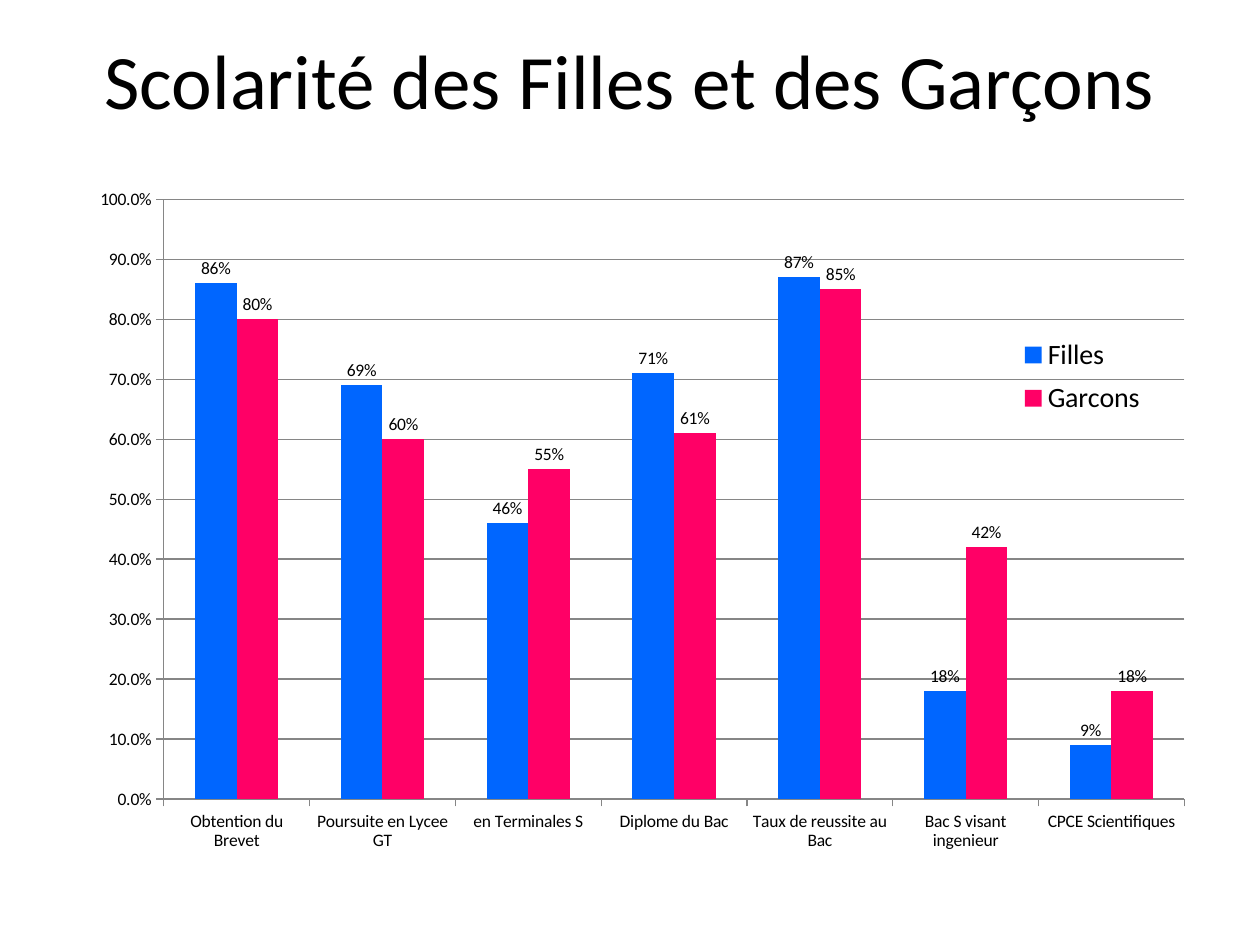
import pptx
import pptx.chart.data
import pptx.dml.color
import pptx.enum.chart
import pptx.enum.text
import pptx.oxml
import pptx.oxml.ns
import pptx.util
from pptx.util import Inches, Pt

RGBColor = pptx.dml.color.RGBColor
BLACK = RGBColor(0x00, 0x00, 0x00)
GRAY = RGBColor(0x86, 0x86, 0x86)
BLUE = RGBColor(0x00, 0x66, 0xFF)
PINK = RGBColor(0xFF, 0x00, 0x66)
FONT = "Calibri"

TITLE = "Scolarité des Filles et des Garçons"
STAGES = [
    "Obtention du Brevet",
    "Poursuite en Lycee GT",
    "en Terminales S",
    "Diplome du Bac",
    "Taux de reussite au Bac",
    "Bac S visant ingenieur",
    "CPCE Scientifiques",
]
SERIES = [
    ("Filles", BLUE, [0.86, 0.69, 0.46, 0.71, 0.87, 0.18, 0.09]),
    ("Garcons", PINK, [0.80, 0.60, 0.55, 0.61, 0.85, 0.42, 0.18]),
]


def style_font(font, size):
    font.name = FONT
    font.size = Pt(size)
    font.bold = False
    font.color.rgb = BLACK


def write_text(shape, text, size, align, anchor):
    frame = shape.text_frame
    frame.word_wrap = True
    frame.vertical_anchor = anchor
    para = frame.paragraphs[0]
    para.alignment = align
    span = para.add_run()
    span.text = text
    style_font(span.font, size)


def manual_layout(x, y, w, h, inner=False):
    """Return a c:layout element; lengths are fractions of the chart."""
    target = '<c:layoutTarget val="inner"/>' if inner else ""
    return pptx.oxml.parse_xml(
        f'<c:layout {pptx.oxml.ns.nsdecls("c")}><c:manualLayout>{target}'
        '<c:xMode val="edge"/><c:yMode val="edge"/>'
        f'<c:x val="{x}"/><c:y val="{y}"/><c:w val="{w}"/><c:h val="{h}"/>'
        "</c:manualLayout></c:layout>"
    )


def drop_layout(parent):
    for layout in parent.findall(pptx.oxml.ns.qn("c:layout")):
        parent.remove(layout)


def add_schooling_chart(page):
    data = pptx.chart.data.CategoryChartData(number_format="0%")
    data.categories = STAGES
    for name, _, values in SERIES:
        data.add_series(name, values)
    chart = page.shapes.add_chart(
        pptx.enum.chart.XL_CHART_TYPE.COLUMN_CLUSTERED,
        Inches(0.67), Inches(1.42), Inches(9), Inches(5.41), data,
    ).chart
    chart.has_title = False
    style_font(chart.font, 10)

    plot = chart.plots[0]
    plot.gap_width = 150
    plot.overlap = 0
    plot.vary_by_categories = False
    for series, (_, color, _) in zip(plot.series, SERIES):
        series.format.fill.solid()
        series.format.fill.fore_color.rgb = color
        series.invert_if_negative = False
        labels = series.data_labels
        labels.show_value = True
        labels.number_format = "0%"
        labels.number_format_is_linked = False
        labels.position = pptx.enum.chart.XL_LABEL_POSITION.OUTSIDE_END
        style_font(labels.font, 10)

    values = chart.value_axis
    values.minimum_scale, values.maximum_scale, values.major_unit = 0, 1, 0.1
    values.has_major_gridlines = True
    values.tick_labels.number_format = "0.0%"
    values.tick_labels.number_format_is_linked = False
    for axis in (chart.category_axis, values):
        axis.major_tick_mark = pptx.enum.chart.XL_TICK_MARK.OUTSIDE
        axis.format.line.color.rgb = GRAY
        style_font(axis.tick_labels.font, 10)
    values.major_gridlines.format.line.color.rgb = GRAY

    chart.has_legend = True
    legend = chart.legend
    legend.position = pptx.enum.chart.XL_LEGEND_POSITION.RIGHT
    legend.include_in_layout = False
    style_font(legend.font, 16)
    drop_layout(legend._element)
    overlay = legend._element.find(pptx.oxml.ns.qn("c:overlay"))
    overlay.addprevious(manual_layout(0.81, 0.22, 0.14, 0.14))

    plot_area = chart._chartSpace.chart.plotArea
    drop_layout(plot_area)
    plot_area.insert(0, manual_layout(0.07, 0.03, 0.9, 0.88, inner=True))


def main():
    deck = pptx.Presentation()
    deck.slide_width, deck.slide_height = Inches(10), Inches(7.5)
    page = deck.slides.add_slide(deck.slide_layouts[5])
    title = page.shapes.title
    title.left, title.top = Inches(0.5), Inches(0)
    title.width, title.height = Inches(9), Inches(1.25)
    write_text(title, TITLE, size=44,
               align=pptx.enum.text.PP_ALIGN.CENTER,
               anchor=pptx.enum.text.MSO_ANCHOR.MIDDLE)
    add_schooling_chart(page)
    deck.save("out.pptx")


if __name__ == "__main__":
    main()
